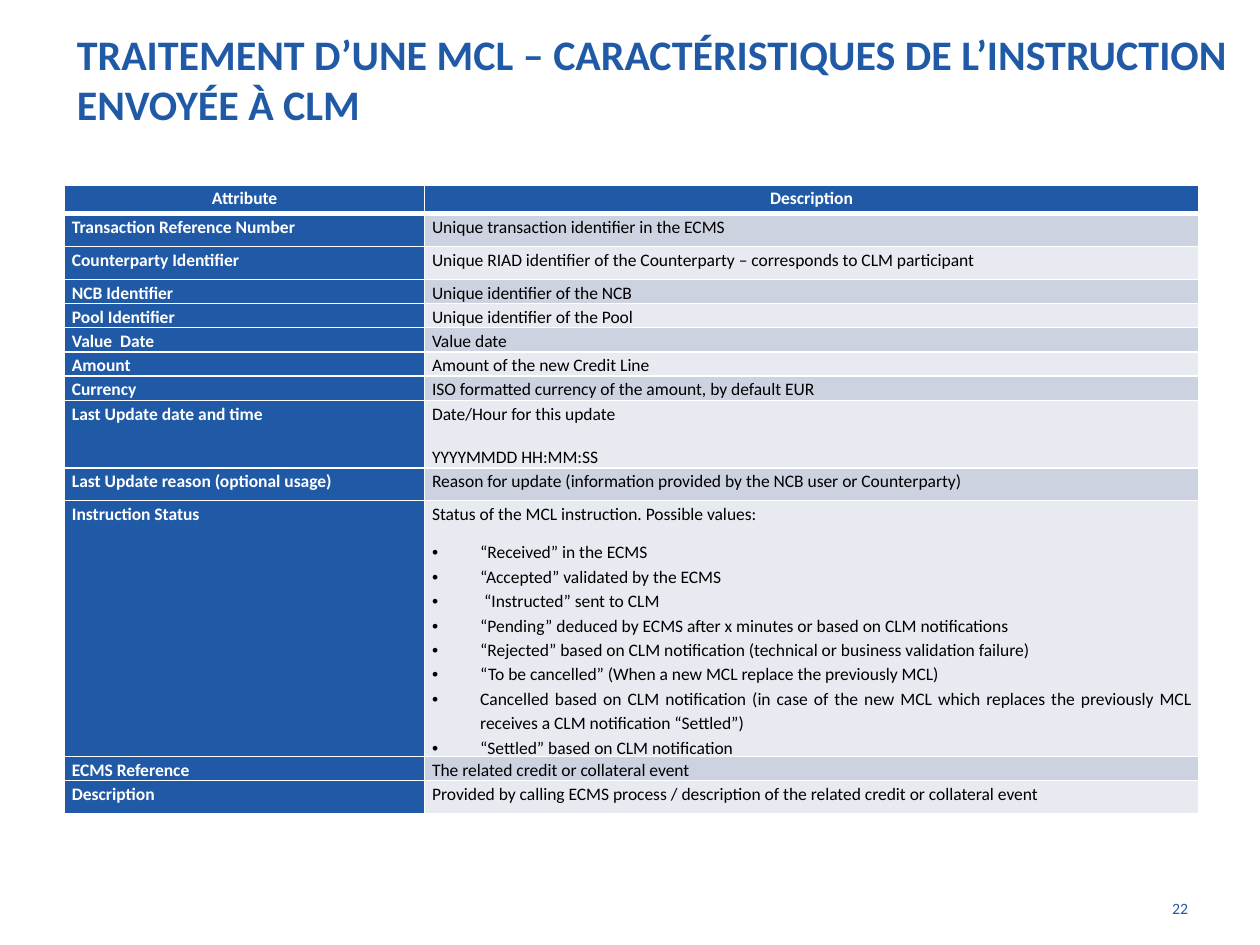
from lxml.etree import SubElement
from pptx import Presentation
from pptx.dml.color import RGBColor
from pptx.enum.text import MSO_ANCHOR, PP_ALIGN
from pptx.oxml.ns import qn
from pptx.util import Cm, Pt

BLUE = RGBColor(0x20, 0x5A, 0xA7)
WHITE = RGBColor(0xFF, 0xFF, 0xFF)
BLACK = RGBColor(0, 0, 0)
DARK = RGBColor(0xCD, 0xD2, 0xE1)
LIGHT = RGBColor(0xE8, 0xEA, 0xF1)

# Each row: height in cm, attribute, paragraphs of its description
ROWS = [
    (0.66, "Transaction Reference Number",
     ["Unique transaction identifier in the ECMS"]),
    (0.66, "Counterparty Identifier",
     ["Unique RIAD identifier of the Counterparty – corresponds to CLM participant"]),
    (0.33, "NCB Identifier", ["Unique identifier of the NCB"]),
    (0.33, "Pool Identifier", ["Unique identifier of the Pool"]),
    (0.33, "Value  Date", ["Value date"]),
    (0.33, "Amount", ["Amount of the new Credit Line"]),
    (0.33, "Currency", ["ISO formatted currency of the amount, by default EUR"]),
    (0.89, "Last Update date and time",
     ["Date/Hour for this update", "YYYYMMDD HH:MM:SS"]),
    (0.66, "Last Update reason (optional usage)",
     ["Reason for update (information provided by the NCB user or Counterparty)"]),
    (5, "Instruction Status", ["Status of the MCL instruction. Possible values:"]),
    (0.33, "ECMS Reference", ["The related credit or collateral event"]),
    (0.66, "Description",
     ["Provided by calling ECMS process / description of the related credit or collateral event"]),
]
STATES = [
    "“Received” in the ECMS",
    "“Accepted” validated by the ECMS",
    " “Instructed” sent to CLM",
    "“Pending” deduced by ECMS after x minutes or based on CLM notifications",
    "“Rejected” based on CLM notification (technical or business validation failure)",
    "“To be cancelled” (When a new MCL replace the previously MCL)",
    "Cancelled based on CLM notification (in case of the new MCL which replaces "
    "the previously MCL receives a CLM notification “Settled”)",
    "“Settled” based on CLM notification",
]


def style(para, size, color, bold=False):
    for run in para.runs:
        font = run.font
        font.name, font.size, font.bold = "Calibri", Pt(size), bold
        font.color.rgb = color


def add_text(slide, box, text, size, bold=False, align=PP_ALIGN.LEFT,
             anchor=MSO_ANCHOR.TOP):
    frame = slide.shapes.add_textbox(*map(Cm, box)).text_frame
    frame.word_wrap = True
    frame.vertical_anchor = anchor
    frame.text = text
    para = frame.paragraphs[0]
    para.alignment = align
    style(para, size, BLUE, bold)


def set_edges(cell, top=1, bottom=1):
    props = cell._tc.get_or_add_tcPr()
    for side, width in (("L", 1), ("R", 1), ("T", top), ("B", bottom)):
        line = SubElement(props, qn(f"a:ln{side}"), w=str(Pt(width)))
        fill = SubElement(line, qn("a:solidFill"))
        SubElement(fill, qn("a:srgbClr"), val=str(WHITE))


def add_bullet(para):
    props = para._p.get_or_add_pPr()
    props.set("marL", str(Cm(0.97)))
    props.set("indent", str(-Cm(0.97)))
    SubElement(props, qn("a:buFont"), typeface="Arial")
    SubElement(props, qn("a:buChar"), char="•")


def fill_cell(cell, texts, fill, color, bold=False, align=PP_ALIGN.LEFT,
              items=(), top=1, bottom=1):
    set_edges(cell, top, bottom)
    cell.fill.solid()
    cell.fill.fore_color.rgb = fill
    cell.margin_left = cell.margin_right = Cm(0.15)
    cell.margin_top = cell.margin_bottom = 0
    frame = cell.text_frame
    for i, text in enumerate([*texts, *items]):
        para = frame.add_paragraph() if i else frame.paragraphs[0]
        para.text = text
        para.alignment = align
        para.line_spacing = 1.15
        if i >= len(texts):
            add_bullet(para)
        else:
            para.space_after = Pt(8)
            if i:
                para.space_before = Pt(3)
        style(para, 10, color, bold)


def add_grid(slide):
    shape = slide.shapes.add_table(len(ROWS) + 1, 2, Cm(1.3), Cm(3.73),
                                   Cm(22.86), Cm(12.65))
    table = shape.table
    table.first_row = table.horz_banding = False
    for col, width in zip(table.columns, (7.26, 15.6)):
        col.width = Cm(width)

    # Header row
    table.rows[0].height = Cm(0.58)
    for i, name in enumerate(("Attribute", "Description")):
        fill_cell(table.cell(0, i), [name], BLUE, WHITE, True,
                  PP_ALIGN.CENTER, bottom=3)

    # Body rows, with alternating bands on the right
    for i, (height, name, texts) in enumerate(ROWS, 1):
        table.rows[i].height = Cm(height)
        top = 3 if i == 1 else 1
        listed = name == "Instruction Status"
        fill_cell(table.cell(i, 0), [name], BLUE, WHITE, True, top=top)
        fill_cell(table.cell(i, 1), texts, DARK if i % 2 else LIGHT, BLACK,
                  align=PP_ALIGN.JUSTIFY if listed else PP_ALIGN.LEFT,
                  items=STATES if listed else (), top=top)
    shape.height = Cm(12.65)


def main():
    deck = Presentation()
    deck.slide_width, deck.slide_height = Cm(25.4), Cm(19.05)
    slide = deck.slides.add_slide(deck.slide_layouts[6])
    # Title
    add_text(slide, (1.3, 0, 25, 3.18),
             "TRAITEMENT D’UNE MCL – CARACTÉRISTIQUES DE L’INSTRUCTION ENVOYÉE À CLM",
             24, True, anchor=MSO_ANCHOR.MIDDLE)
    # Attribute table
    add_grid(slide)
    # Page number
    add_text(slide, (22.7, 18, 1.5, 1), "22", 9, align=PP_ALIGN.RIGHT)
    deck.save("out.pptx")


if __name__ == "__main__":
    main()
